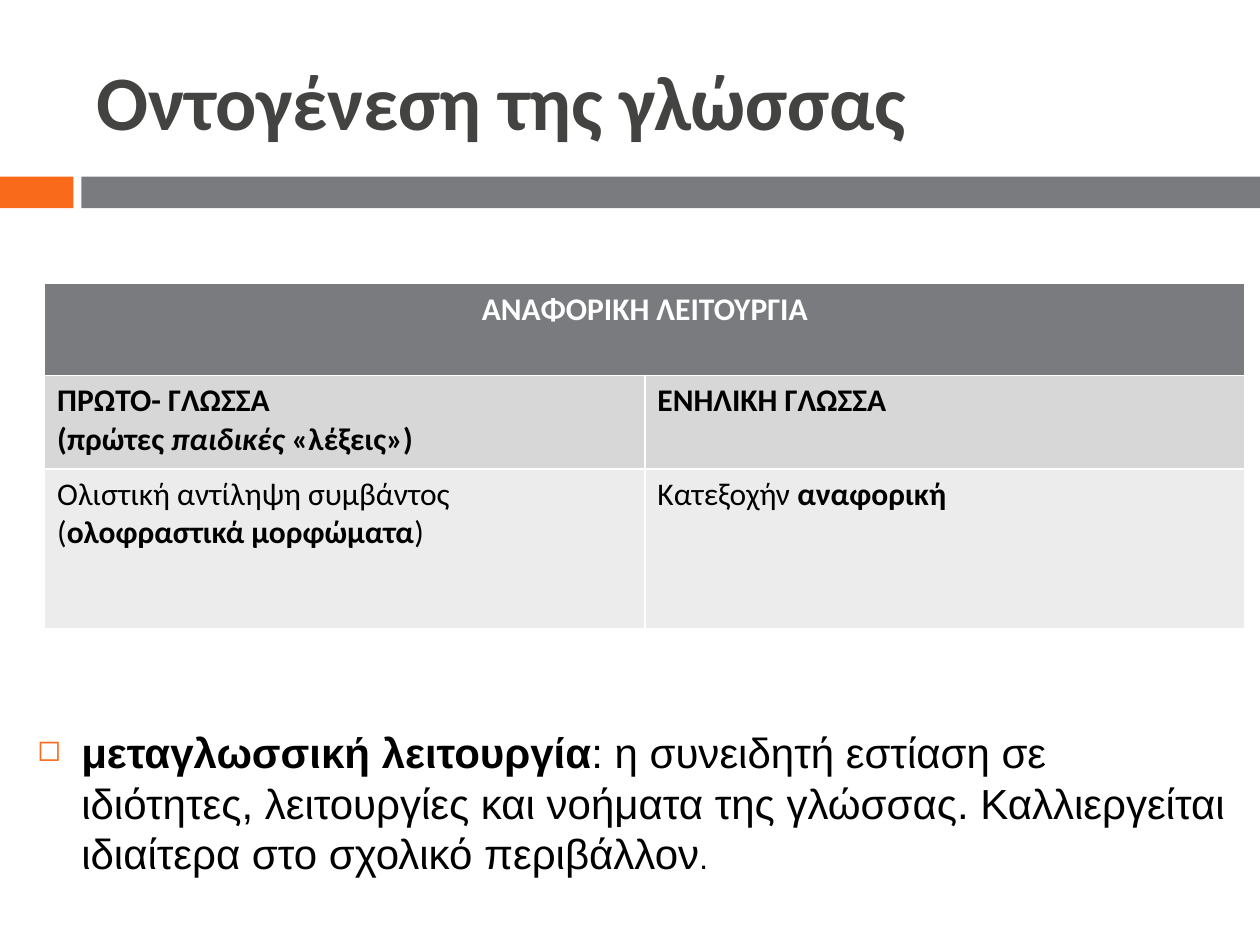
from lxml.etree import SubElement
from pptx import Presentation
from pptx.dml.color import RGBColor
from pptx.enum.shapes import MSO_SHAPE as SHAPE
from pptx.enum.text import MSO_ANCHOR as ANCHOR, PP_ALIGN as ALIGN
from pptx.oxml.ns import qn
from pptx.util import Cm, Pt

ORANGE = RGBColor(0xF9, 0x6A, 0x1B)
GRAY = RGBColor(0x79, 0x7B, 0x7E)
DARK = RGBColor(0x43, 0x43, 0x42)
MID = RGBColor(0xD7, 0xD7, 0xD8)
LIGHT = RGBColor(0xEC, 0xEC, 0xEC)
WHITE = RGBColor(0xFF, 0xFF, 0xFF)
BLACK = RGBColor(0, 0, 0)


def add_run(p, text, size, color, font="Calibri", bold=False, italic=False):
    r = p.add_run()
    r.text = text
    r.font.name = font
    r.font.size = Pt(size)
    r.font.bold = bold
    r.font.italic = italic
    r.font.color.rgb = color


prs = Presentation()
prs.slide_width, prs.slide_height = Cm(25.4), Cm(19.05)
s = prs.slides.add_slide(prs.slide_layouts[5])

for left, width, color in [(0, 1.48, ORANGE), (1.64, 23.76, GRAY)]:
    bar = s.shapes.add_shape(SHAPE.RECTANGLE, Cm(left), Cm(3.56), Cm(width), Cm(0.64))
    bar.shadow.inherit = False
    bar.fill.solid()
    bar.fill.fore_color.rgb = color
    bar.line.fill.background()

title = s.shapes.title
title.left, title.top, title.width, title.height = Cm(1.7), Cm(0.64), Cm(22.66), Cm(2.74)
tf = title.text_frame
tf.vertical_anchor = ANCHOR.MIDDLE
p = tf.paragraphs[0]
p.alignment = ALIGN.LEFT
add_run(p, "Οντογένεση της γλώσσας", 44, DARK, bold=True)

rows = [
    (1.85, GRAY, WHITE, [[[("ΑΝΑΦΟΡΙΚΗ ΛΕΙΤΟΥΡΓΙΑ", True, False)]]]),
    (1.88, MID, BLACK, [
        [[("ΠΡΩΤΟ- ΓΛΩΣΣΑ", True, False)],
         [("(πρώτες ", True, False), ("παιδικές", True, True), (" «λέξεις»)", True, False)]],
        [[("ΕΝΗΛΙΚΗ ΓΛΩΣΣΑ", True, False)]],
    ]),
    (3.23, LIGHT, BLACK, [
        [[("Ολιστική αντίληψη συμβάντος (", False, False),
          ("ολοφραστικά μορφώματα", True, False), (")", False, False)]],
        [[("Κατεξοχήν ", False, False), ("αναφορική", True, False)]],
    ]),
]
table = s.shapes.add_table(3, 2, Cm(0.9), Cm(5.72), Cm(24.2), Cm(6.96)).table
table.cell(0, 0).merge(table.cell(0, 1))
for i, (height, fill, color, cells) in enumerate(rows):
    table.rows[i].height = Cm(height)
    for j, paragraphs in enumerate(cells):
        cell = table.cell(i, j)
        cell.fill.solid()
        cell.fill.fore_color.rgb = fill
        for k, runs in enumerate(paragraphs):
            p = cell.text_frame.add_paragraph() if k else cell.text_frame.paragraphs[0]
            p.alignment = ALIGN.LEFT if i else ALIGN.CENTER
            for text, bold, italic in runs:
                add_run(p, text, 18, color, bold=bold, italic=italic)

tf = s.shapes.add_textbox(Cm(0.5), Cm(14.53), Cm(24.5), Cm(3.33)).text_frame
tf.word_wrap = True
p = tf.paragraphs[0]
pPr = p._p.get_or_add_pPr()
pPr.set("marL", str(Cm(0.89)))
pPr.set("indent", str(-Cm(0.89)))
SubElement(SubElement(pPr, qn("a:buClr")), qn("a:srgbClr")).set("val", str(ORANGE))
SubElement(pPr, qn("a:buSzPct")).set("val", "70000")
SubElement(pPr, qn("a:buChar")).set("char", "◻")
add_run(p, "μεταγλωσσική λειτουργία", 24, BLACK, "Arial", bold=True)
add_run(p, ": η συνειδητή εστίαση σε ιδιότητες, λειτουργίες και νοήματα της γλώσσας. "
           "Καλλιεργείται ιδιαίτερα στο σχολικό περιβάλλον", 24, BLACK, "Arial")
add_run(p, ".", 18, BLACK, "Arial")

prs.save("out.pptx")
